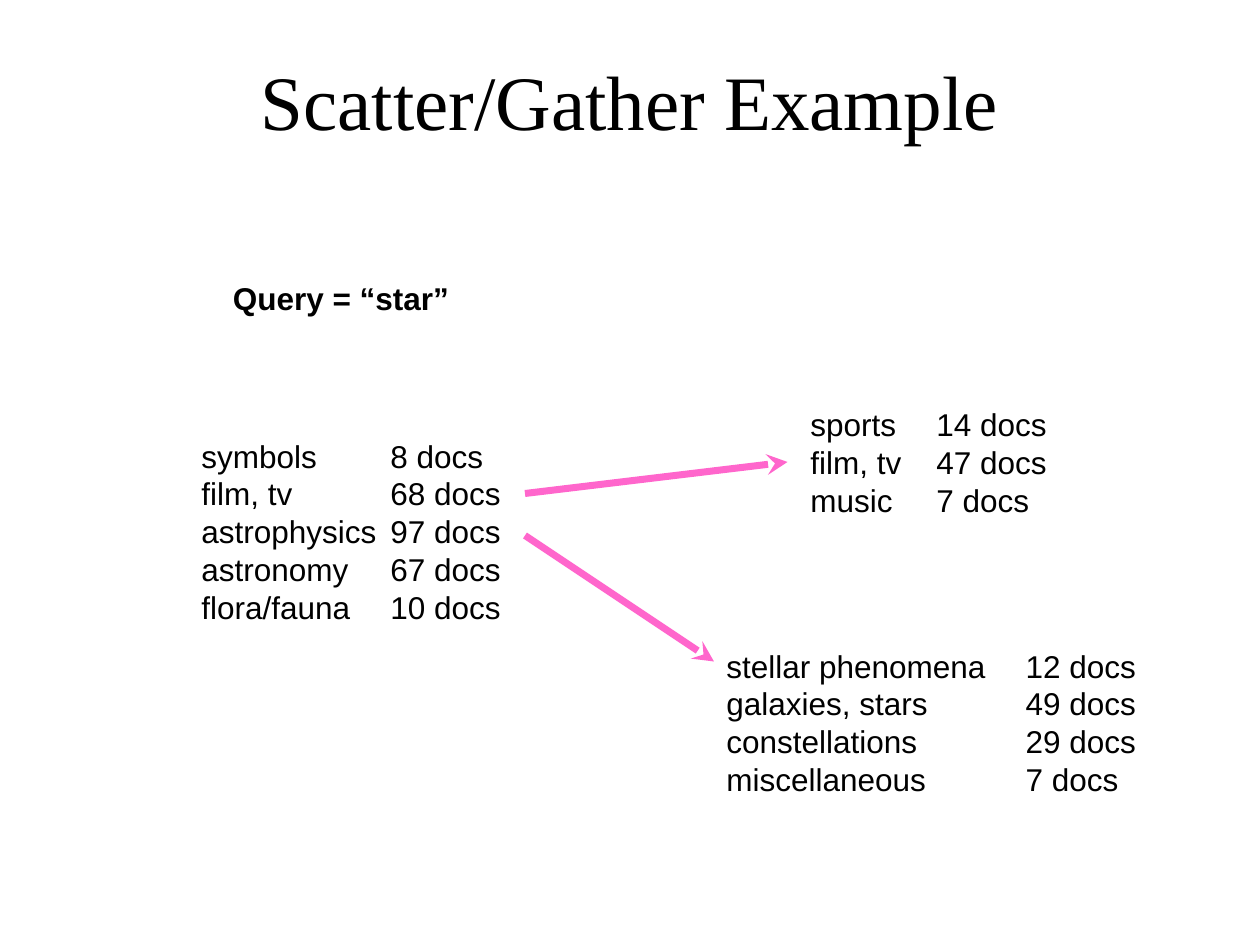
from dataclasses import dataclass

from lxml.etree import SubElement
from pptx import Presentation
from pptx.dml.color import RGBColor as Color
from pptx.enum.shapes import MSO_CONNECTOR as Connector
from pptx.enum.text import MSO_ANCHOR as Anchor, MSO_AUTO_SIZE as AutoSize, PP_ALIGN as Align
from pptx.oxml.ns import qn
from pptx.util import Inches, Pt


@dataclass(frozen=True)
class Theme:
    ink: Color = Color(0x00, 0x00, 0x00)
    arrow: Color = Color(0xFF, 0x66, 0xCC)
    title_font: str = "Times New Roman"
    body_font: str = "Arial"
    title_size: int = 44
    body_size: int = 18
    arrow_width: int = 4


THEME = Theme()
BODY = {"name": THEME.body_font, "size": Pt(THEME.body_size)}
TITLE = {"name": THEME.title_font, "size": Pt(THEME.title_size)}

# The page is a grid of 120 columns by 90 rows, twelve to the inch
COLUMNS, ROWS = 120, 90


def grid(units):
    return Inches(units / 12)


def add_lines(page, box, lines, font, tab=None, **frame_format):
    """Place one paragraph per line; tab is the column of the tab stop."""
    frame = page.shapes.add_textbox(*map(grid, box)).text_frame
    for name, value in frame_format.items():
        setattr(frame, name, value)
    for index, line in enumerate(lines):
        para = frame.paragraphs[0] if index == 0 else frame.add_paragraph()
        if tab:
            stops = SubElement(para._p.get_or_add_pPr(), qn("a:tabLst"))
            SubElement(stops, qn("a:tab"), pos=str(grid(tab)), algn="l")
        span = para.add_run()
        span.text = line
        span.font.color.rgb = THEME.ink
        for name, value in font.items():
            setattr(span.font, name, value)
    return frame


def add_title(page, box, text):
    frame = add_lines(page, box, [text], TITLE, word_wrap=True, vertical_anchor=Anchor.MIDDLE)
    frame.paragraphs[0].alignment = Align.CENTER


def add_query(page, box, text):
    add_lines(page, box, [text], {**BODY, "bold": True},
              word_wrap=False, auto_size=AutoSize.SHAPE_TO_FIT_TEXT)


def add_clusters(page, box, tab, clusters, wrap=False):
    """List each cluster's topic with its document count at the tab stop."""
    lines = [f"{topic}\t{count} docs" for topic, count in clusters]
    add_lines(page, box, lines, BODY, tab,
              word_wrap=wrap, auto_size=AutoSize.SHAPE_TO_FIT_TEXT)


def add_arrow(page, start, end):
    arrow = page.shapes.add_connector(Connector.STRAIGHT, *map(grid, start + end))
    arrow.line.color.rgb = THEME.arrow
    arrow.line.width = Pt(THEME.arrow_width)
    SubElement(arrow.line._get_or_add_ln(), qn("a:tailEnd"), type="stealth")
    SubElement(arrow._element.spPr, qn("a:effectLst"))


def main():
    deck = Presentation()
    deck.slide_width, deck.slide_height = grid(COLUMNS), grid(ROWS)
    page = deck.slides.add_slide(deck.slide_layouts[6])

    # Arrows from a chosen cluster to its re-clustered topics
    for end in [(68, 63), (75, 44)]:
        start_row = 51 if end[1] > 51 else 47
        add_arrow(page, (50, start_row), end)

    # First clustering
    add_clusters(page, (18, 41, 39, 19.2), 18, [
        ("symbols", 8), ("film, tv", 68), ("astrophysics", 97),
        ("astronomy", 67), ("flora/fauna", 10),
    ], wrap=True)

    # Clusters within film, tv
    add_clusters(page, (76, 38, 25, 12), 12, [
        ("sports", 14), ("film, tv", 47), ("music", 7),
    ])

    # Clusters within astrophysics
    add_clusters(page, (68, 61, 41.4, 15.6), 28.5, [
        ("stellar phenomena", 12), ("galaxies, stars", 49),
        ("constellations", 29), ("miscellaneous", 7),
    ])

    # Query and title
    add_query(page, (21, 26, 24, 4.8), "Query = “star”")
    add_title(page, (9, 2, 102, 15), "Scatter/Gather Example")

    deck.save("out.pptx")


if __name__ == "__main__":
    main()
